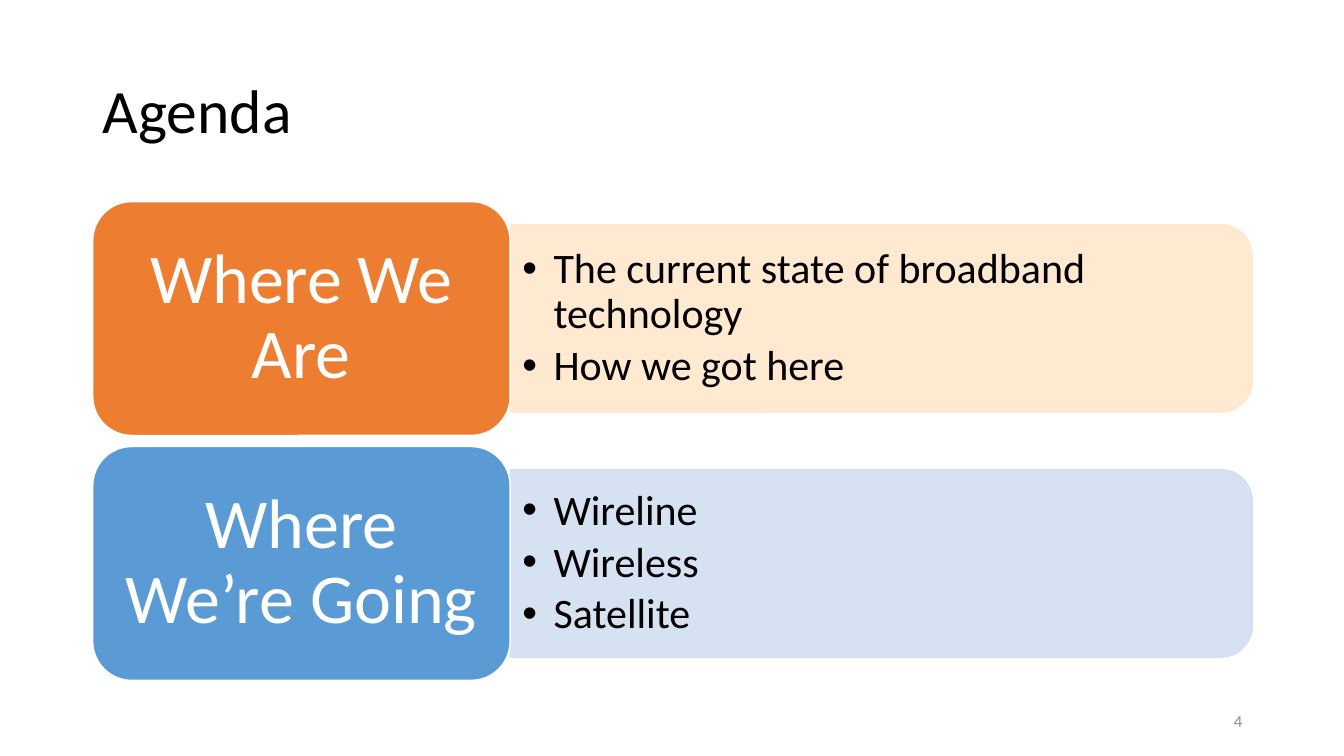
from dataclasses import dataclass

from lxml import etree
from pptx import Presentation
from pptx.dml.color import RGBColor
from pptx.enum.shapes import MSO_SHAPE
from pptx.enum.text import MSO_ANCHOR, MSO_AUTO_SIZE, PP_ALIGN
from pptx.oxml.ns import qn
from pptx.util import Emu, Pt

LEFT, CENTER, RIGHT = PP_ALIGN.LEFT, PP_ALIGN.CENTER, PP_ALIGN.RIGHT
MIDDLE = MSO_ANCHOR.MIDDLE
NO_AUTOFIT = MSO_AUTO_SIZE.NONE
ROUNDED = MSO_SHAPE.ROUNDED_RECTANGLE
TOP_ROUNDED = MSO_SHAPE.ROUND_2_SAME_RECTANGLE

EMU_PER_PX = 9144
FONT = "Calibri"
COLORS = {
    "black": "000000",
    "white": "FFFFFF",
    "gray": "8C8C8C",
    "orange": "ED7D31",
    "orange_tint": "FFE8CC",
    "blue": "5B9BD5",
    "blue_tint": "D2DFF0",
}

SLIDE_W, SLIDE_H = 1333, 750
CARD_X, CARD_Y, CARD_W, CARD_H = 92, 200, 414, 232
ROW_PITCH = 243
PANEL_W, PANEL_H = 736, 186
LIST_W, LIST_H = 727, 168


@dataclass
class Topic:
    heading: str
    items: list[str]
    color: str
    tint: str


TOPICS = [
    Topic("Where We Are",
          ["The current state of broadband technology", "How we got here"],
          "orange", "orange_tint"),
    Topic("Where We’re Going",
          ["Wireline", "Wireless", "Satellite"],
          "blue", "blue_tint"),
]


def px(n: float) -> Emu:
    return Emu(round(n * EMU_PER_PX))


def rgb(name: str) -> RGBColor:
    return RGBColor.from_string(COLORS[name])


def place(sp, x: float, y: float, w: float, h: float) -> None:
    sp.left, sp.top, sp.width, sp.height = px(x), px(y), px(w), px(h)


def write(sp, lines: list[str], *, size: int, color: str = "black",
          align=LEFT, spacing: float = 0.9, after: float = 0,
          inset: tuple[int, int] = (10, 5), bullets: bool = False) -> None:
    tf = sp.text_frame
    tf.word_wrap = True
    tf.auto_size = NO_AUTOFIT
    tf.vertical_anchor = MIDDLE
    tf.margin_left = tf.margin_right = px(inset[0])
    tf.margin_top = tf.margin_bottom = px(inset[1])
    for i, line in enumerate(lines):
        p = tf.paragraphs[0] if i == 0 else tf.add_paragraph()
        p.alignment = align
        p.line_spacing = spacing
        p.space_before = Pt(0)
        p.space_after = Pt(after)
        r = p.add_run()
        r.text = line
        r.font.name = FONT
        r.font.size = Pt(size)
        r.font.color.rgb = rgb(color)
        if bullets:
            add_bullet(p)


def add_bullet(p) -> None:
    pPr = p._p.get_or_add_pPr()
    pPr.set("marL", str(px(31)))
    pPr.set("indent", str(-px(31)))
    etree.SubElement(pPr, qn("a:buChar")).set("char", "•")


def add_block(s, preset, x: float, y: float, w: float, h: float,
              fill: str, line: str):
    sp = s.shapes.add_shape(preset, px(x), px(y), px(w), px(h))
    sp.shadow.inherit = False
    sp.fill.solid()
    sp.fill.fore_color.rgb = rgb(fill)
    sp.line.color.rgb = rgb(line)
    sp.line.width = Pt(1)
    return sp


def add_panel(s, x: float, mid_y: float, tint: str):
    sp = add_block(s, TOP_ROUNDED, x + (PANEL_W - PANEL_H) / 2,
                   mid_y - PANEL_W / 2, PANEL_H, PANEL_W, tint, tint)
    sp.rotation = 90
    for clr in sp._element.spPr.iter(qn("a:srgbClr")):
        etree.SubElement(clr, qn("a:alpha")).set("val", "90000")
    return sp


def add_topic(s, body, topic: Topic, y: int) -> None:
    x, mid_y = CARD_X + CARD_W, y + CARD_H / 2
    panel = add_panel(s, x, mid_y, topic.tint)
    place(body, x, mid_y - LIST_H / 2, LIST_W, LIST_H)
    write(body, topic.items, size=30, after=4.5, inset=(12, 6), bullets=True)
    panel._element.addnext(body._element)
    card = add_block(s, ROUNDED, CARD_X, y, CARD_W, CARD_H, topic.color, "white")
    write(card, [topic.heading], size=50, color="white", align=CENTER,
          inset=(20, 10))


def main() -> None:
    prs = Presentation()
    prs.slide_width, prs.slide_height = px(SLIDE_W), px(SLIDE_H)
    s = prs.slides.add_slide(prs.slide_layouts[3])
    title, *bodies = s.placeholders
    place(title, 92, 40, 1150, 145)
    write(title, ["Agenda"], size=44)
    for i, (body, topic) in enumerate(zip(bodies, TOPICS)):
        add_topic(s, body, topic, CARD_Y + i * ROW_PITCH)
    number = s.shapes.add_textbox(px(942), px(695), px(300), px(40))
    write(number, ["4"], size=12, color="gray", align=RIGHT, spacing=1.0)
    prs.save("out.pptx")


if __name__ == "__main__":
    main()
